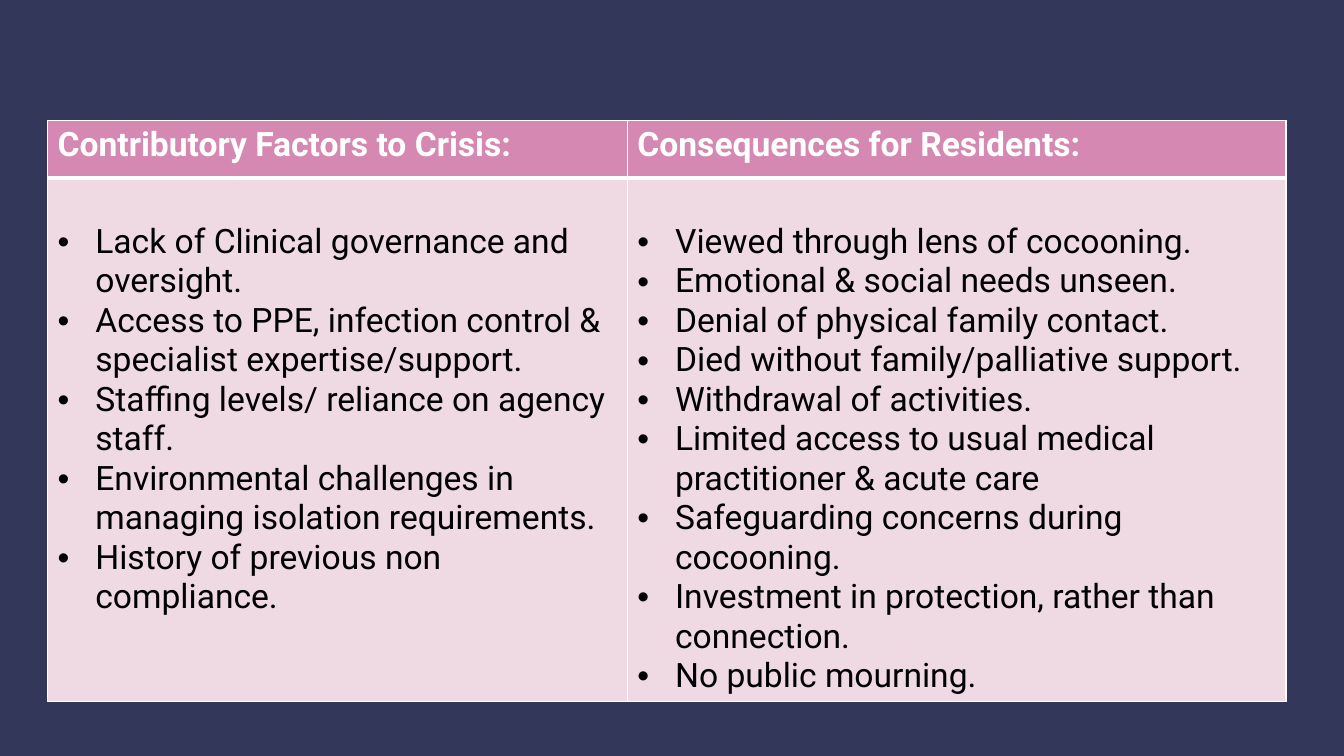
from dataclasses import dataclass

from lxml.etree import SubElement
from pptx import Presentation
from pptx.dml.color import RGBColor as Rgb
from pptx.enum.text import MSO_ANCHOR as Anchor
from pptx.oxml.ns import qn
from pptx.util import Cm, Pt


@dataclass(frozen=True)
class Theme:
    background: str = "33385B"
    header_fill: str = "D488B2"
    body_fill: str = "EFDAE4"
    header_text: str = "FFFFFF"
    body_text: str = "000000"
    border: str = "FFFFFF"
    font: str = "Roboto"
    size: int = 24
    thin: int = 1
    thick: int = 3


class SlideBuilder:
    def __init__(self, slide, theme):
        self.slide = slide
        self.theme = theme

    def background(self):
        fill = self.slide.background.fill
        fill.solid()
        fill.fore_color.rgb = Rgb.from_string(self.theme.background)

    def borders(self, cell, bottom):
        thin = self.theme.thin
        properties = cell._tc.get_or_add_tcPr()
        for side, width in {"L": thin, "R": thin, "T": thin, "B": bottom}.items():
            line = SubElement(properties, qn(f"a:ln{side}"), w=str(Pt(width)))
            fill = SubElement(line, qn("a:solidFill"))
            SubElement(fill, qn("a:srgbClr"), val=self.theme.border)

    def bullet(self, paragraph):
        indent = Cm(0.95)
        properties = paragraph._p.get_or_add_pPr()
        properties.set("marL", str(indent))
        properties.set("indent", str(-indent))
        SubElement(properties, qn("a:buFont"), typeface="Arial")
        SubElement(properties, qn("a:buChar"), char="•")

    def cell(self, cell, lines, fill, color, bold, bottom, margin_top, bulleted):
        self.borders(cell, bottom)
        cell.fill.solid()
        cell.fill.fore_color.rgb = Rgb.from_string(fill)
        cell.vertical_anchor = Anchor.TOP
        cell.margin_top = margin_top
        text_format = {"name": self.theme.font, "size": Pt(self.theme.size), "bold": bold}
        frame = cell.text_frame
        frame.text = "\n".join(lines)
        for paragraph in frame.paragraphs:
            if bulleted:
                self.bullet(paragraph)
            font = paragraph.runs[0].font
            for attribute, value in text_format.items():
                setattr(font, attribute, value)
            font.color.rgb = Rgb.from_string(color)

    def table(self, columns, left, top, widths, heights):
        theme = self.theme
        table = self.slide.shapes.add_table(
            len(heights), len(widths), left, top, sum(widths), sum(heights)).table
        table.horz_banding = False
        for row, height in zip(table.rows, heights):
            row.height = height
        header_style = dict(fill=theme.header_fill, color=theme.header_text, bold=True,
                            bottom=theme.thick, margin_top=Cm(0.13), bulleted=False)
        body_style = dict(fill=theme.body_fill, color=theme.body_text, bold=False,
                          bottom=theme.thin, margin_top=Cm(1.12), bulleted=True)
        for index, (heading, points) in enumerate(columns.items()):
            table.columns[index].width = widths[index]
            self.cell(table.cell(0, index), [heading], **header_style)
            self.cell(table.cell(1, index), points, **body_style)


# Content: one heading and its points per column
CRISIS_COLUMNS = {
    "Contributory Factors to Crisis:": [
        "Lack of Clinical governance and oversight.",
        "Access to PPE, infection control & specialist expertise/support.",
        "Staffing levels/ reliance on agency staff.",
        "Environmental challenges in managing isolation requirements.",
        "History of previous non compliance.",
    ],
    "Consequences for Residents:": [
        "Viewed through lens of cocooning.",
        "Emotional & social needs unseen.",
        "Denial of physical family contact.",
        "Died without family/palliative support.",
        "Withdrawal of activities.",
        "Limited access to usual medical practitioner & acute care",
        "Safeguarding concerns during cocooning.",
        "Investment in protection, rather than connection.",
        "No public mourning.",
    ],
}


def main():
    deck = Presentation()
    deck.slide_width, deck.slide_height = Cm(33.87), Cm(19.05)
    blank_layout = deck.slide_layouts[6]
    builder = SlideBuilder(deck.slides.add_slide(blank_layout), Theme())

    # Dark backdrop
    builder.background()

    # Factors and consequences
    builder.table(CRISIS_COLUMNS, Cm(1.2), Cm(3.03),
                  widths=[Cm(14.61), Cm(16.6)], heights=[Cm(1.45), Cm(13.2)])

    deck.save("out.pptx")


if __name__ == "__main__":
    main()
